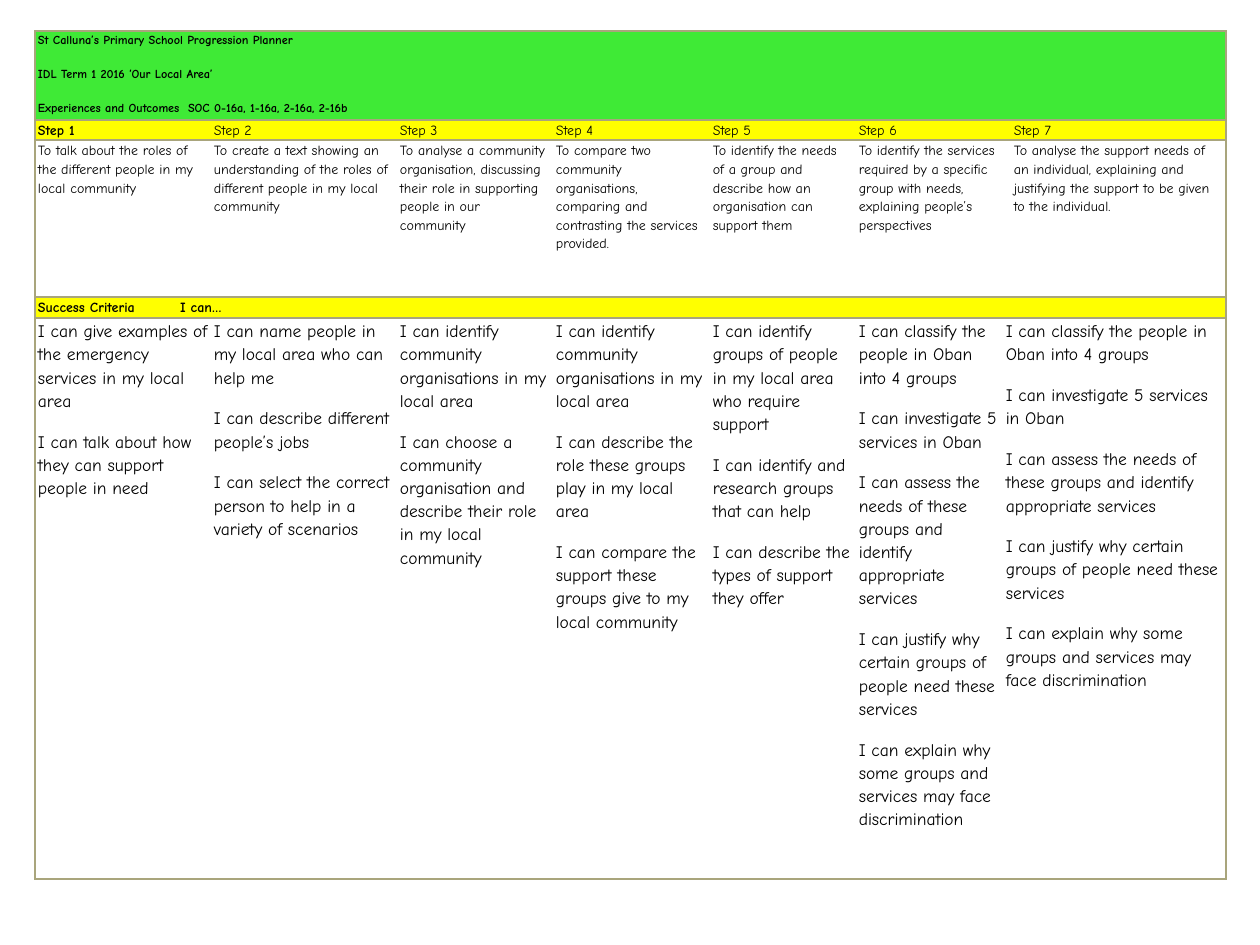
from dataclasses import dataclass

from lxml import etree
from pptx import Presentation
from pptx import util as u
from pptx.dml.color import RGBColor
from pptx.oxml import ns

SCALE = 914400 / 126
PLAIN_TABLE = "{2D5ABB26-0587-4C30-8999-92F81FD0307C}"


@dataclass(frozen=True)
class Theme:
    """Colours, font and type sizes of the planner."""
    banner: str = "3FEA36"
    band: str = "FFFF00"
    rule: str = "A9A57C"
    ink: str = "000000"
    font: str = "Comic Neue"
    title: int = 7
    label: int = 8
    body: int = 10


THEME = Theme()
COLUMNS = [176, 186, 156, 157, 146, 147, 8, 215]
ROWS = [89, 20, 157, 21, 561]
STEP_SPANS = [(0, 0), (1, 1), (2, 2), (3, 3), (4, 4), (5, 6), (7, 7)]
CRITERIA_SPANS = STEP_SPANS[:5] + [(5, 5), (6, 7)]
FULL_SPAN = (0, len(COLUMNS) - 1)

TITLES = [
    "St Calluna’s Primary School Progression Planner",
    "IDL Term 1 2016 ‘Our Local Area’",
    "Experiences and Outcomes  SOC 0-16a, 1-16a, 2-16a, 2-16b",
]
AIMS = [
    "To talk about the roles of the different people in my local community",
    "To create a text showing an understanding of the roles of different people in my local community",
    "To analyse a community organisation, discussing their role in supporting people in our community",
    "To compare two community organisations, comparing and contrasting the services provided.",
    "To identify the needs of a group and describe how an organisation can support them",
    "To identify the services required by a specific group with needs, explaining people’s perspectives",
    "To analyse the support needs of an individual, explaining and justifying the support to be given "
    "to the individual.",
]
ORGANISATIONS = "I can identify community organisations in my local area"
INDIVIDUAL_NEEDS = [
    "I can classify the people in Oban into 4 groups",
    "I can investigate 5 services in Oban",
    "I can assess the needs of these groups and identify appropriate services",
    "I can justify why certain groups of people need these services",
    "I can explain why some groups and services may face discrimination",
]
CRITERIA = [
    ["I can give examples of the emergency services in my local area",
     "I can talk about how they can support people in need"],
    ["I can name people in my local area who can help me",
     "I can describe different people’s jobs",
     "I can select the correct person to help in a variety of scenarios"],
    [ORGANISATIONS,
     "I can choose a community organisation and describe their role in my local community"],
    [ORGANISATIONS,
     "I can describe the role these groups play in my local area",
     "I can compare the support these groups give to my local community"],
    ["I can identify groups of people in my local area who require support",
     "I can identify and research groups that can help",
     "I can describe the types of support they offer"],
    INDIVIDUAL_NEEDS,
    INDIVIDUAL_NEEDS,
]


def px(length):
    """Turn pixels into EMU."""
    return u.Emu(round(length * SCALE))


def add_grid(page, left, top):
    """Add an unstyled table with the planner's columns and rows."""
    frame = page.shapes.add_table(len(ROWS), len(COLUMNS), px(left), px(top),
                                  px(sum(COLUMNS)), px(sum(ROWS)))
    table = frame.table
    table.first_row = table.horz_banding = False
    table._tbl.tblPr.find(ns.qn("a:tableStyleId")).text = PLAIN_TABLE
    for column, width in zip(table.columns, COLUMNS):
        column.width = px(width)
    for row, height in zip(table.rows, ROWS):
        row.height = px(height)
    return table


def add_borders(cell, sides):
    """Rule the named sides of a cell, given in the order L, R, T, B."""
    properties = cell._tc.get_or_add_tcPr()
    for side in sides:
        line = etree.SubElement(properties, ns.qn(f"a:ln{side}"), w=str(u.Pt(1)))
        fill = etree.SubElement(line, ns.qn("a:solidFill"))
        etree.SubElement(fill, ns.qn("a:srgbClr"), val=THEME.rule)


def add_tab_stop(para, position):
    """Give a paragraph one left tab stop."""
    properties = para._p.get_or_add_pPr()
    stops = etree.Element(ns.qn("a:tabLst"))
    etree.SubElement(stops, ns.qn("a:tab"), pos=str(px(position)), algn="l")
    properties.find(ns.qn("a:defRPr")).addprevious(stops)


def write_cell(cell, lines, size, bold):
    """Write one paragraph per line into a cell."""
    cell.margin_left = cell.margin_right = px(3)
    cell.margin_top, cell.margin_bottom = px(1), 0
    frame = cell.text_frame
    frame.text = "\n".join(lines)
    for para in frame.paragraphs:
        para.line_spacing = 1.15
        para.space_after = u.Pt(10)
        para.font.name = THEME.font
        para.font.size = u.Pt(size)
        para.font.bold = bold
        para.font.color.rgb = RGBColor.from_string(THEME.ink)


def fill_row(table, row, spans, entries, size, fill=None, bold_first=False):
    """Merge, rule, colour and write the cells of one row."""
    for (first, last), lines in zip(spans, entries):
        cell = table.cell(row, first)
        if last > first:
            cell.merge(table.cell(row, last))
        for column in range(first, last + 1):
            left = "L" if column == 0 else ""
            right = "R" if last == FULL_SPAN[1] and column in (first, last) else ""
            add_borders(table.cell(row, column), left + right + "TB")
        if fill:
            cell.fill.solid()
            cell.fill.fore_color.rgb = RGBColor.from_string(fill)
        else:
            cell.fill.background()
        write_cell(cell, lines, size, bold_first and first == 0)


def main():
    """Build the progression planner."""
    deck = Presentation()
    deck.slide_width, deck.slide_height = px(1260), px(945)
    page = deck.slides.add_slide(deck.slide_layouts[6])
    table = add_grid(page, 35, 31)
    steps = [[f"Step {number}"] for number in range(1, len(AIMS) + 1)]

    fill_row(table, 0, [FULL_SPAN], [TITLES], THEME.title, THEME.banner, True)
    fill_row(table, 1, STEP_SPANS, steps, THEME.label, THEME.band, True)
    fill_row(table, 2, STEP_SPANS, [[aim] for aim in AIMS], THEME.label)
    fill_row(table, 3, [FULL_SPAN], [["Success Criteria\tI can…"]], THEME.label, THEME.band, True)
    add_tab_stop(table.cell(3, 0).text_frame.paragraphs[0], 142)
    fill_row(table, 4, CRITERIA_SPANS, CRITERIA, THEME.body)
    deck.save("out.pptx")


if __name__ == "__main__":
    main()
